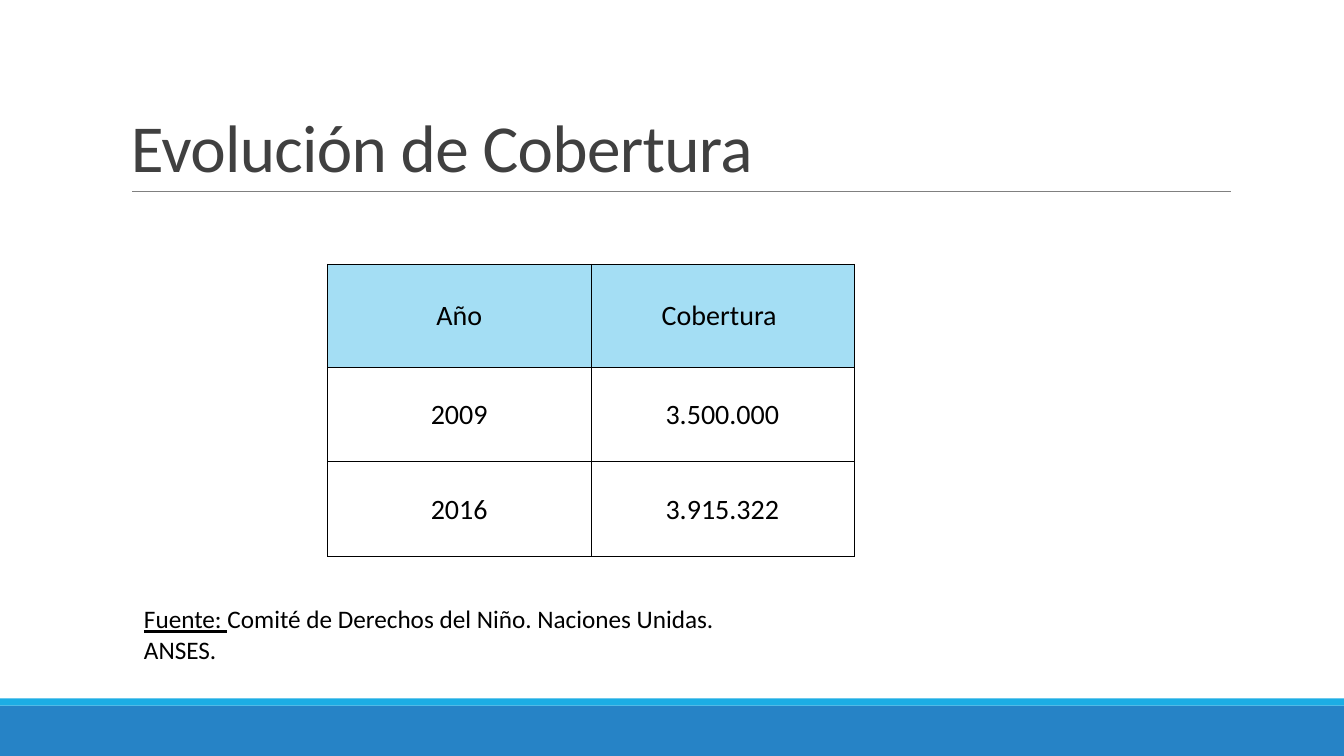
from lxml.etree import SubElement
from pptx import Presentation
from pptx.dml.color import RGBColor
from pptx.enum.shapes import MSO_CONNECTOR, MSO_SHAPE
from pptx.enum.text import MSO_ANCHOR, PP_ALIGN
from pptx.oxml.ns import qn
from pptx.util import Inches, Pt


def color(code):
    return RGBColor.from_string(code)


def write(para, text, size=18, ink="000000", font="Calibri", under=False, track=0):
    run = para.add_run()
    run.text = text
    run.font.size = Pt(size)
    run.font.name = font
    run.font.color.rgb = color(ink)
    if under:
        run.font.underline = True
    if track:
        run._r.get_or_add_rPr().set("spc", str(track))


class Deck:
    rule = "808080"
    edge = "000000"
    head = "A4DEF4"
    thin = Pt(0.5)

    def __init__(self, slide):
        self.slide = slide

    def bar(self, top, height, fill):
        shape = self.slide.shapes.add_shape(
            MSO_SHAPE.RECTANGLE, 0, Inches(top), Inches(13.33), Inches(height))
        shape.shadow.inherit = False
        shape.fill.solid()
        shape.fill.fore_color.rgb = color(fill)
        shape.line.fill.background()

    def line(self, left, right, top):
        line = self.slide.shapes.add_connector(
            MSO_CONNECTOR.STRAIGHT, Inches(left), Inches(top), Inches(right), Inches(top))
        line.line.color.rgb = color(self.rule)
        line.line.width = self.thin
        SubElement(line._element.spPr, qn("a:effectLst"))

    def text(self, box, lines, anchor=MSO_ANCHOR.TOP, space=1.0):
        frame = self.slide.shapes.add_textbox(*map(Inches, box)).text_frame
        frame.word_wrap = True
        frame.vertical_anchor = anchor
        for i, runs in enumerate(lines):
            para = frame.add_paragraph() if i else frame.paragraphs[0]
            para.line_spacing = space
            for words, style in runs:
                write(para, words, **style)

    def border(self, cell):
        props = cell._tc.get_or_add_tcPr()
        for side in ("lnL", "lnR", "lnT", "lnB"):
            line = SubElement(props, qn("a:" + side), w=str(self.thin))
            fill = SubElement(line, qn("a:solidFill"))
            SubElement(fill, qn("a:srgbClr"), val=self.edge)

    def table(self, left, top, widths, heights, data):
        table = self.slide.shapes.add_table(
            len(heights), len(widths), Inches(left), Inches(top),
            Inches(sum(widths)), Inches(sum(heights))).table
        for col, width in zip(table.columns, widths):
            col.width = Inches(width)
        for r, (height, row) in enumerate(zip(heights, data)):
            table.rows[r].height = Inches(height)
            for c, words in enumerate(row):
                cell = table.cell(r, c)
                cell.vertical_anchor = MSO_ANCHOR.MIDDLE
                cell.margin_left = cell.margin_right = cell.margin_top = Inches(0.01)
                cell.margin_bottom = 0
                self.border(cell)
                if r == 0:
                    cell.fill.solid()
                    cell.fill.fore_color.rgb = color(self.head)
                else:
                    cell.fill.background()
                para = cell.text_frame.paragraphs[0]
                para.alignment = PP_ALIGN.CENTER
                write(para, words, size=20)


def main():
    prs = Presentation()
    prs.slide_width, prs.slide_height = Inches(13.33), Inches(7.5)
    deck = Deck(prs.slides.add_slide(prs.slide_layouts[6]))

    # Footer bars and title rule
    deck.bar(7, 0.5, "2683C6")
    deck.bar(6.93, 0.07, "1CADE4")
    deck.line(1.31, 12.21, 1.9)

    # Title
    title = dict(size=48, ink="404040", track=-50)
    deck.text((1.2, 0.31, 11, 1.59), [[("Evolución de Cobertura", title)]],
              anchor=MSO_ANCHOR.BOTTOM, space=0.85)

    # Coverage by year
    deck.table(3.25, 2.62, [2.61] * 2, [1.02, 0.94, 0.94], [
        ("Año", "Cobertura "),
        ("2009", "3.500.000"),
        ("2016", "3.915.322"),
    ])

    # Source note
    deck.text((1.33, 5.94, 6.67, 0.71), [
        [("Fuente: ", dict(under=True)),
         ("Comité de Derechos del Niño. Naciones Unidas.", {})],
        [("ANSES.", {})],
    ])

    prs.save("out.pptx")


if __name__ == "__main__":
    main()
